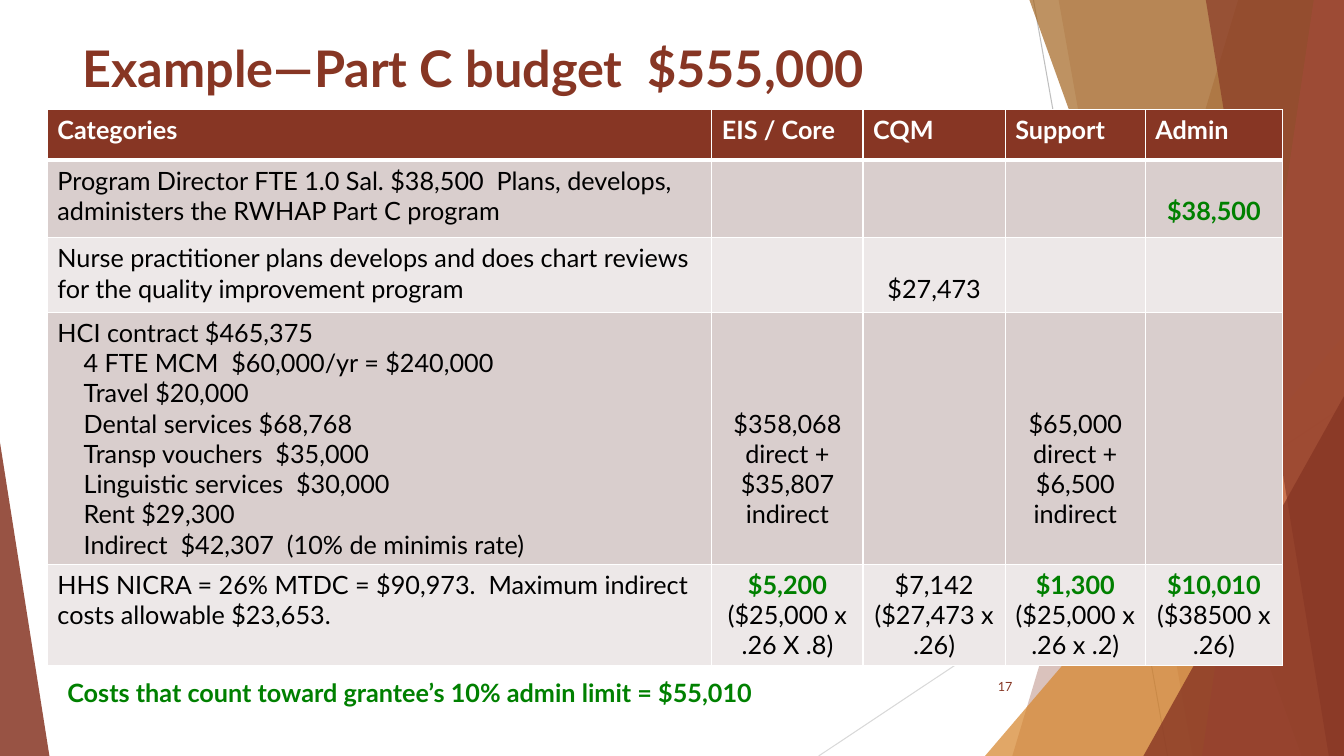
from lxml.etree import SubElement
from pptx import Presentation
from pptx.dml.color import RGBColor
from pptx.enum.shapes import MSO_CONNECTOR, MSO_SHAPE
from pptx.enum.text import MSO_ANCHOR, PP_ALIGN
from pptx.oxml import parse_xml
from pptx.oxml.ns import nsdecls, qn
from pptx.util import Inches, Pt

TITLE = "Example—Part C budget  $555,000"
FOOTNOTE = "Costs that count toward grantee’s 10% admin limit = $55,010"
PAGE_NUMBER = "17"

HEADINGS = ["Categories", "EIS / Core", "CQM", "Support", "Admin"]
CATEGORIES = [
    ["Program Director FTE 1.0 Sal. $38,500  Plans, develops, administers the RWHAP Part C program"],
    ["Nurse practitioner plans develops and does chart reviews for the quality improvement program"],
    ["HCI contract $465,375",
     "4 FTE MCM  $60,000/yr = $240,000",
     "Travel $20,000",
     "Dental services $68,768",
     "Transp vouchers  $35,000",
     "Linguistic services  $30,000",
     "Rent $29,300",
     "Indirect  $42,307  (10% de minimis rate)"],
    ["HHS NICRA = 26% MTDC = $90,973.  Maximum indirect costs allowable $23,653."],
]
# (row, column): (lines to move down, amount under the admin limit, other text)
AMOUNTS = {
    (1, 4): (1, "$38,500", ""),
    (2, 2): (1, "", "$27,473"),
    (3, 1): (3, "", "$358,068 direct + $35,807 indirect"),
    (3, 3): (3, "", "$65,000 direct + $6,500 indirect"),
    (4, 1): (0, "$5,200 ", "($25,000 x .26 X .8)"),
    (4, 2): (0, "", "$7,142 ($27,473 x .26)"),
    (4, 3): (0, "$1,300 ", "($25,000 x .26 x .2)"),
    (4, 4): (0, "$10,010 ", "($38500 x .26)"),
}

THEME = {
    "font": "Lato",
    "title": 36, "body": 18, "number": 9,
    "rust": "873624", "amber": "D6862D", "brown": "A36520", "coral": "D4745E",
    "green": "008000", "black": "000000", "white": "FFFFFF",
    "bands": ["D9CECD", "EDE8E8"],
    "grays": ["BFBFBF", "D9D9D9"],
}

WIDTH, HEIGHT = 13.33, 7.5
COLUMNS = [6.59, 1.5, 1.41, 1.39, 1.36]
ROWS = [0.5, 0.77, 0.74, 2.5, 1.0]
TABLE_LEFT, TABLE_TOP = 0.47, 1.09
LINE_HEIGHT, CELL_MARGIN, INDENT = 0.3, 0.05, 0.26

RAYS = [((10.25, 0), (11.58, HEIGHT)), ((WIDTH, 4.03), (8.12, HEIGHT))]
# Back to front. Bands: top x, bottom x. Triangles: left, width, top, tip position.
FACETS = [
    ("band", (12.28, 10.04), "rust", 30),
    ("band", (10.5, 11.83), "rust", 20),
    ("triangle", (9.77, 3.56, 3.33, 1), "amber", 72),
    ("band", (10.21, 12.91), "brown", 70),
    ("band", (13.03, 11.92), "coral", 70),
    ("band", (11.96, 13.18), "rust", 65),
    ("triangle", (11.34, 1.99, 3.93, 1), "rust", 80),
    ("triangle", (0, 0.49, 4.39, 0), "rust", 85),
]


def color(name):
    return RGBColor.from_string(THEME.get(name, name))


def add_span(para, text, size, ink, bold=False):
    span = para.add_run()
    span.text = text
    formats = {"name": THEME["font"], "size": Pt(THEME[size]), "bold": bold}
    for key, value in formats.items():
        setattr(span.font, key, value)
    span.font.color.rgb = color(ink)


def place(box, left, top, width, height):
    for key, value in zip(("left", "top", "width", "height"), (left, top, width, height)):
        setattr(box, key, Inches(value))


def add_ray(page, start, end, gray):
    ray = page.shapes.add_connector(MSO_CONNECTOR.STRAIGHT, *map(Inches, start + end))
    ray.line.color.rgb = color(gray)
    ray.line.width = Pt(0.75)
    SubElement(ray._element.spPr, qn("a:effectLst"))


def add_facet(page, kind, geometry, ink, opacity):
    if kind == "band":
        top_x, bottom_x = geometry
        builder = page.shapes.build_freeform(Inches(top_x), 0)
        corners = [(WIDTH, 0), (WIDTH, HEIGHT), (bottom_x, HEIGHT)]
        builder.add_line_segments([(Inches(x), Inches(y)) for x, y in corners], close=True)
        facet = builder.convert_to_shape()
    else:
        left, width, top, tip = geometry
        facet = page.shapes.add_shape(
            MSO_SHAPE.ISOSCELES_TRIANGLE, *map(Inches, (left, top, width, HEIGHT - top)))
        facet.adjustments[0] = tip
    facet.shadow.inherit = False
    facet.line.fill.background()
    facet.fill.solid()
    facet.fill.fore_color.rgb = color(ink)
    paint = facet.fill._xPr.find(qn("a:solidFill"))[0]
    SubElement(paint, qn("a:alpha"), val=str(opacity * 1000))


def style_cell(cell, row):
    """Fill the cell and draw its white borders, thick under the heading row."""
    cell.fill.solid()
    cell.fill.fore_color.rgb = color(THEME["bands"][(row - 1) % 2] if row else "rust")
    cell.margin_top = cell.margin_bottom = Inches(CELL_MARGIN)
    widths = {"lnL": 1, "lnR": 1, "lnT": 3 if row == 1 else 1, "lnB": 1 if row else 3}
    for position, (side, width) in enumerate(widths.items()):
        border = parse_xml(
            f'<a:{side} {nsdecls("a")} w="{Pt(width)}"><a:solidFill>'
            f'<a:srgbClr val="{THEME["white"]}"/></a:solidFill></a:{side}>')
        cell._tc.get_or_add_tcPr().insert(position, border)


def write_category(cell, lines):
    frame = cell.text_frame
    for number, line in enumerate(lines):
        para = frame.add_paragraph() if number else frame.paragraphs[0]
        if number:
            properties = para._p.get_or_add_pPr()
            properties.set("marL", str(Inches(INDENT)))
            properties.set("indent", "0")
        add_span(para, line, "body", "black")


def write_amount(cell, lines_down, counted, other):
    cell.margin_top = Inches(CELL_MARGIN + lines_down * LINE_HEIGHT)
    para = cell.text_frame.paragraphs[0]
    para.alignment = PP_ALIGN.CENTER
    if counted:
        add_span(para, counted, "body", "green", True)
    if other:
        add_span(para, other, "body", "black")


def add_budget(page):
    lengths = map(Inches, (TABLE_LEFT, TABLE_TOP, sum(COLUMNS), sum(ROWS)))
    table = page.shapes.add_table(len(ROWS), len(COLUMNS), *lengths).table
    for column, width in zip(table.columns, COLUMNS):
        column.width = Inches(width)
    for number, (row, height) in enumerate(zip(table.rows, ROWS)):
        row.height = Inches(height)
        for cell in row.cells:
            style_cell(cell, number)
    for column, heading in enumerate(HEADINGS):
        add_span(table.cell(0, column).text_frame.paragraphs[0], heading, "body", "white", True)
    for row, lines in enumerate(CATEGORIES, 1):
        write_category(table.cell(row, 0), lines)
    for (row, column), amount in AMOUNTS.items():
        write_amount(table.cell(row, column), *amount)


def add_text(page, area, text, size, ink, bold, align, anchor):
    box = page.shapes.add_textbox(*map(Inches, area))
    frame = box.text_frame
    frame.word_wrap = True
    frame.vertical_anchor = anchor
    frame.paragraphs[0].alignment = align
    add_span(frame.paragraphs[0], text, size, ink, bold)


def main():
    deck = Presentation()
    deck.slide_width, deck.slide_height = Inches(WIDTH), Inches(HEIGHT)
    page = deck.slides.add_slide(deck.slide_layouts[5])
    for (start, end), gray in zip(RAYS, THEME["grays"]):
        add_ray(page, start, end, gray)
    for facet in FACETS:
        add_facet(page, *facet)

    title = page.shapes.title
    place(title, 0.72, 0.26, 9.4, 0.81)
    page.shapes._spTree.append(title._element)
    title.text_frame.vertical_anchor = MSO_ANCHOR.MIDDLE
    heading = title.text_frame.paragraphs[0]
    heading.alignment = PP_ALIGN.LEFT
    add_span(heading, TITLE, "title", "rust", True)

    add_budget(page)
    add_text(page, (9.39, 6.61, 0.75, 0.4), PAGE_NUMBER, "number", "rust", False,
             PP_ALIGN.RIGHT, MSO_ANCHOR.MIDDLE)
    add_text(page, (0.57, 6.67, 9.14, 0.4), FOOTNOTE, "body", "green", True,
             PP_ALIGN.LEFT, MSO_ANCHOR.TOP)
    deck.save("out.pptx")


if __name__ == "__main__":
    main()
